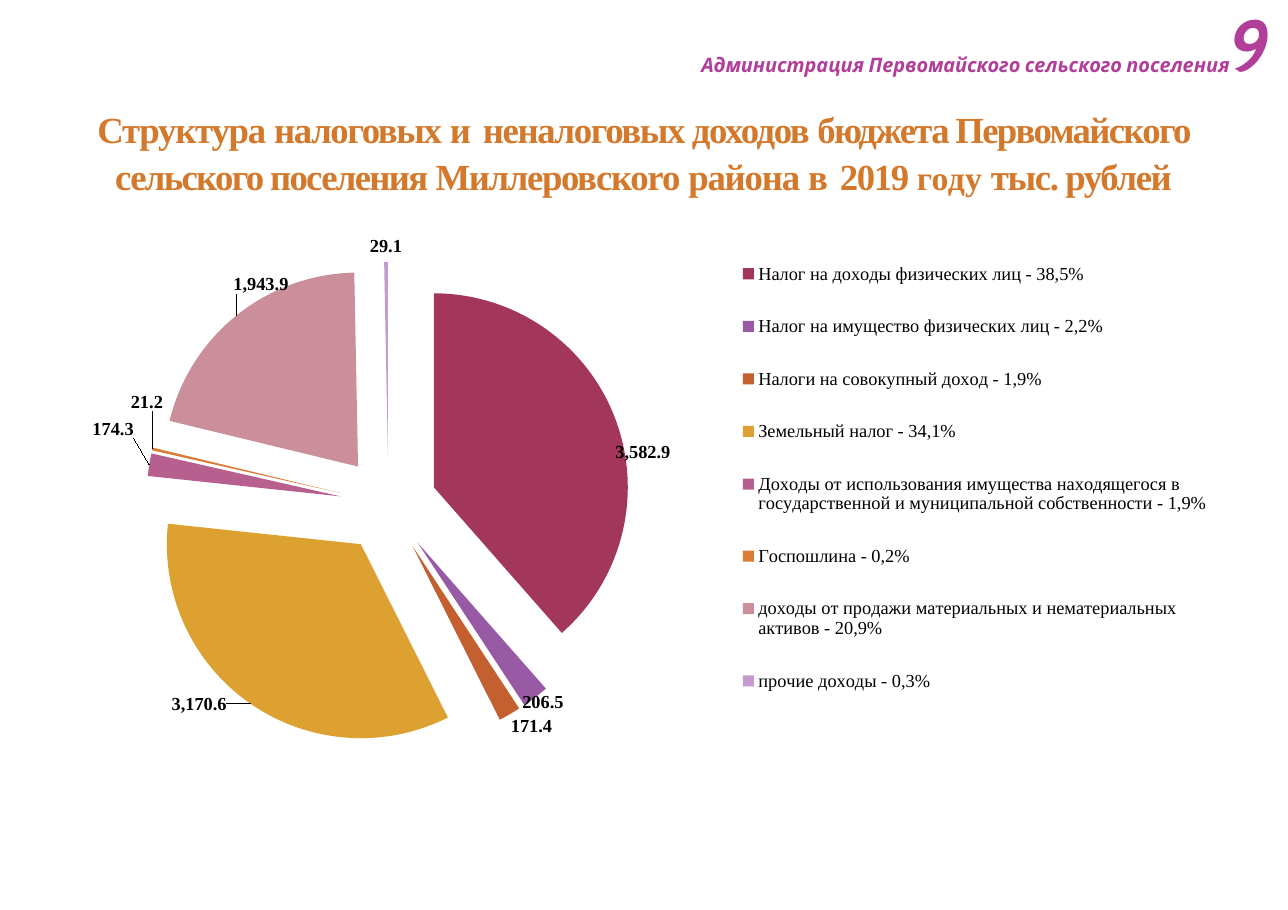
from lxml import etree
from pptx import Presentation
from pptx.chart.data import CategoryChartData
from pptx.dml.color import RGBColor
from pptx.enum.chart import XL_CHART_TYPE as ChartType
from pptx.enum.chart import XL_LABEL_POSITION as LabelPosition
from pptx.enum.chart import XL_LEGEND_POSITION as LegendPosition
from pptx.enum.text import MSO_ANCHOR as Anchor
from pptx.enum.text import MSO_AUTO_SIZE as AutoSize
from pptx.enum.text import PP_ALIGN as Align
from pptx.oxml.ns import qn
from pptx.util import Pt

PX = 8298
SERIF = "Times New Roman"
COLORS = {
    "title": "D4792B", "header": "B13F9A", "text": "000000",
    "income": "A2365B", "property": "985AA5", "total": "C46030",
    "land": "DDA131", "use": "B76090", "duty": "DC7B35",
    "sale": "CB8E9B", "other": "C39BD0",
}
CHART_LEFT, CHART_TOP, CHART_WIDTH, CHART_HEIGHT = 66, 207, 1163, 540


def rgb(name):
    return RGBColor.from_string(COLORS[name])


def make_layout(x, y, width=None, height=None, inner=False):
    """Return a manual chart layout; lengths are px within the chart."""
    layout = etree.Element(qn("c:layout"))
    manual = etree.SubElement(layout, qn("c:manualLayout"))
    values = {"x": x / CHART_WIDTH, "y": y / CHART_HEIGHT}
    if width:
        values |= {"w": width / CHART_WIDTH, "h": height / CHART_HEIGHT}
        modes = {"xMode": "edge", "yMode": "edge"}
        if inner:
            modes = {"layoutTarget": "inner"} | modes
        values = modes | values
    for tag, value in values.items():
        etree.SubElement(manual, qn(f"c:{tag}")).set("val", str(value))
    return layout


deck = Presentation()
deck.slide_width = 1288 * PX
deck.slide_height = 910 * PX
page = deck.slides.add_slide(deck.slide_layouts[5])

# Title, with letter spacing in hundredths of a point
title = page.shapes.title
title.left, title.top, title.width, title.height = [
    n * PX for n in (88, 105, 1111, 89)]
header = page.shapes.add_textbox(645 * PX, 24 * PX, 625 * PX, 63 * PX)
for box, anchor in ((title, Anchor.TOP), (header, Anchor.BOTTOM)):
    frame = box.text_frame
    frame.word_wrap = True
    frame.auto_size = AutoSize.NONE
    frame.vertical_anchor = anchor
    frame.margin_left = frame.margin_right = 0
    frame.margin_top = frame.margin_bottom = 0

para = title.text_frame.paragraphs[0]
para.alignment = Align.CENTER
para.line_spacing = 1.05
para.font.name, para.font.size, para.font.bold = SERIF, Pt(24), True
para.font.color.rgb = rgb("title")
for text, spacing in (
    ("Структура ", -80), ("налоговых ", -90), ("и ", 90),
    ("неналоговых доходов ", -90),
    ("бюджета Первомайского сельского поселения ", -110),
    ("Миллеровскоrо ", -90), ("района ", -80), ("в ", 90),
    ("2019 ", -90), ("году ", 20), ("тыс. рублей", -90),
):
    span = para.add_run()
    span.text = text
    span._r.get_or_add_rPr().set("spc", str(spacing))
    if text == "году ":
        span.font.size = Pt(22)

# Header with the page number
para = header.text_frame.paragraphs[0]
para.alignment = Align.RIGHT
para.font.name, para.font.bold, para.font.italic = "Cabin", True, True
para.font.color.rgb = rgb("header")
for text, size in (("Администрация Первомайского сельского поселения", 13),
                   ("9", 48)):
    span = para.add_run()
    span.text = text
    span.font.size = Pt(size)

# Category, value, colour and label shift in px
revenues = [
    ("Налог на доходы физических лиц - 38,5%", 3582.9, "income", (-6, 45)),
    ("Налог на имущество физических лиц - 2,2%", 206.5, "property", (-17, -10)),
    ("Налоги на совокупный доход - 1,9%", 171.4, "total", (-2, -3)),
    ("Земельный налог - 34,1%", 3170.6, "land", (-20, -15)),
    ("Доходы от использования имущества находящегося в государственной "
     "и муниципальной собственности - 1,9%", 174.3, "use", (-9, -25)),
    ("Госпошлина - 0,2%", 21.2, "duty", (17, -36)),
    ("доходы от продажи материальных и нематериальных активов - 20,9%",
     1943.9, "sale", (56, -16)),
    ("прочие доходы - 0,3%", 29.1, "other", None),
]
data = CategoryChartData(number_format="#,##0.0")
data.categories = [revenue[0] for revenue in revenues]
data.add_series("Series 1", [revenue[1] for revenue in revenues])
chart = page.shapes.add_chart(
    ChartType.PIE, CHART_LEFT * PX, CHART_TOP * PX,
    CHART_WIDTH * PX, CHART_HEIGHT * PX, data).chart
chart.has_title = False
chart.font.name, chart.font.size = "Cabin", Pt(10)
chart.font.color.rgb = rgb("text")

plot = chart.plots[0]
plot.vary_by_categories = True
series = plot.series[0]
explosion = etree.Element(qn("c:explosion"))
explosion.set("val", "25")
series._element.find(qn("c:tx")).addnext(explosion)

labels = series.data_labels
labels.show_value = True
labels.number_format = "#,##0.0"
labels.number_format_is_linked = False
labels.position = LabelPosition.OUTSIDE_END
label_fonts = [labels.font]
for index, (_, _, color, shift) in enumerate(revenues):
    point = series.points[index]
    point.format.fill.solid()
    point.format.fill.fore_color.rgb = rgb(color)
    point.format.line.fill.background()
    if shift:
        label = point.data_label
        label.position = LabelPosition.OUTSIDE_END
        label_fonts.append(label.font)
        entry = labels._element.findall(qn("c:dLbl"))[-1]
        entry.find(qn("c:idx")).addnext(make_layout(*shift))
for font in label_fonts:
    font.name, font.size, font.bold = SERIF, Pt(12), True
    font.color.rgb = rgb("text")

chart.has_legend = True
legend = chart.legend
legend.position = LegendPosition.RIGHT
legend.include_in_layout = False
legend.font.name, legend.font.size = SERIF, Pt(12)
legend.font.color.rgb = rgb("text")

plot_area = chart._chartSpace.find(f".//{qn('c:plotArea')}")
for parent in (plot_area, legend._element):
    for layout in parent.findall(qn("c:layout")):
        parent.remove(layout)
plot_area.insert(0, make_layout(80, 55, 485, 485, inner=True))
legend._element.find(qn("c:legendPos")).addnext(make_layout(668, 24, 482, 493))

deck.save("out.pptx")
